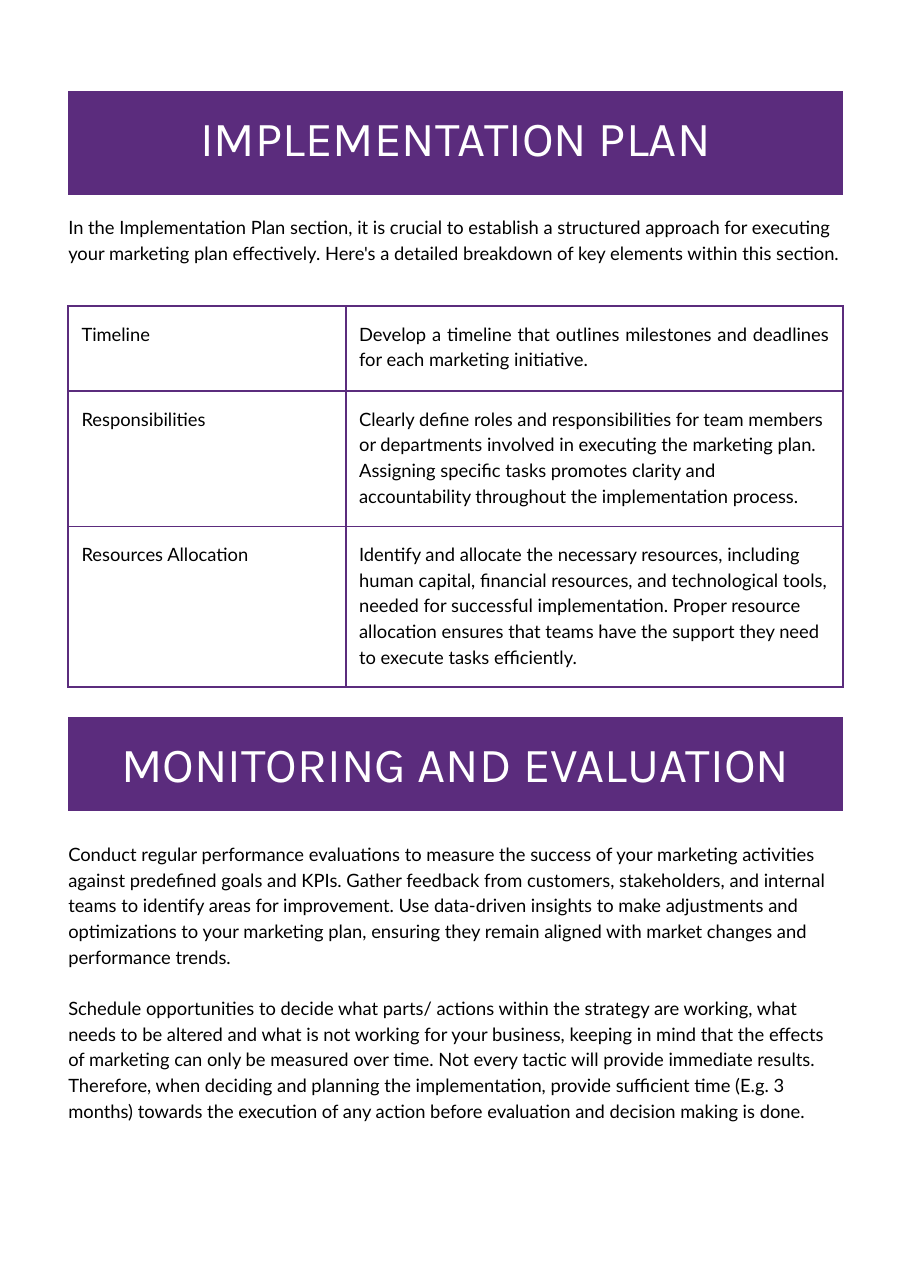
import pptx
import pptx.dml.color
import pptx.enum.text
import pptx.oxml
import pptx.oxml.ns
import pptx.util

# Content
BANNERS = {
    "plan": "IMPLEMENTATION PLAN",
    "review": "MONITORING AND EVALUATION",
}
INTRO = [
    "In the Implementation Plan section, it is crucial to establish a structured approach for "
    "executing your marketing plan effectively. Here's a detailed breakdown of key elements "
    "within this section.",
]
# Element, description, alignment of the description
ELEMENTS = [
    ("Timeline",
     "Develop a timeline that outlines milestones and deadlines for each marketing initiative.",
     "JUSTIFY"),
    ("Responsibilities",
     "Clearly define roles and responsibilities for team members or departments involved in "
     "executing the marketing plan. Assigning specific tasks promotes clarity and accountability "
     "throughout the implementation process.",
     "LEFT"),
    ("Resources Allocation",
     "Identify and allocate the necessary resources, including human capital, financial "
     "resources, and technological tools, needed for successful implementation. Proper resource "
     "allocation ensures that teams have the support they need to execute tasks efficiently.",
     "LEFT"),
]
REVIEW = [
    "Conduct regular performance evaluations to measure the success of your marketing activities "
    "against predefined goals and KPIs. Gather feedback from customers, stakeholders, and "
    "internal teams to identify areas for improvement. Use data-driven insights to make "
    "adjustments and optimizations to your marketing plan, ensuring they remain aligned with "
    "market changes and performance trends.",
    "Schedule opportunities to decide what parts/ actions within the strategy are working, what "
    "needs to be altered and what is not working for your business, keeping in mind that the "
    "effects of marketing can only be measured over time. Not every tactic will provide immediate "
    "results. Therefore, when deciding and planning the implementation, provide sufficient time "
    "(E.g. 3 months) towards the execution of any action before evaluation and decision making "
    "is done.",
]

# Format
COLORS = {"purple": "5B2C7D", "text": "000000", "banner text": "FFFFFF"}
LINE_RATIO = 1.4
BODY_SIZE, BANNER_SIZE = 12, 32
RULE_WIDTH, THIN_RULE = 1.5, 0.75

# Layout in inches
PAGE_WIDTH, PAGE_HEIGHT = 8.26, 11.69
MARGIN = 0.62
CONTENT_WIDTH = 7.03
LABEL_WIDTH = 2.52
COLUMNS = [LABEL_WIDTH, CONTENT_WIDTH - LABEL_WIDTH]
ROWS = [0.77, 1.23, 1.46]
TOPS = {"plan": 0.83, "intro": 1.93, "elements": 2.78, "review": 6.51, "review text": 7.62}

inches = pptx.util.Inches
presentation = pptx.Presentation()
presentation.slide_width = inches(PAGE_WIDTH)
presentation.slide_height = inches(PAGE_HEIGHT)
slide = presentation.slides.add_slide(presentation.slide_layouts[6])


def write(frame, paragraphs, size=BODY_SIZE, font="Lato", color="text", align="LEFT", inset=0):
    """Fill a text frame, leaving one empty line's height between paragraphs."""
    frame.word_wrap = True
    frame.margin_left = frame.margin_right = inches(inset)
    frame.margin_top = frame.margin_bottom = inches(inset)
    for index, text in enumerate(paragraphs):
        paragraph = frame.paragraphs[0] if index == 0 else frame.add_paragraph()
        paragraph.alignment = getattr(pptx.enum.text.PP_ALIGN, align)
        paragraph.line_spacing = pptx.util.Pt(size * LINE_RATIO)
        if index:
            paragraph.space_before = pptx.util.Pt(size * LINE_RATIO)
        run = paragraph.add_run()
        run.text = text
        run.font.name = font
        run.font.size = pptx.util.Pt(size)
        run.font.bold = False
        run.font.color.rgb = pptx.dml.color.RGBColor.from_string(COLORS[color])


def add_text(top, height, paragraphs):
    box = slide.shapes.add_textbox(*map(inches, (MARGIN, top, CONTENT_WIDTH, height)))
    write(box.text_frame, paragraphs)


def add_table(top, columns, rows):
    frame = slide.shapes.add_table(
        len(rows), len(columns), *map(inches, (MARGIN, top, sum(columns), sum(rows))))
    table = frame.table
    table.first_row = table.horz_banding = False
    for column, width in zip(table.columns, columns):
        column.width = inches(width)
    for row, height in zip(table.rows, rows):
        row.height = inches(height)
    return table


def set_borders(cell, top=0, bottom=0, sides=0):
    """Set border widths in points; zero hides the border."""
    properties = cell._tc.get_or_add_tcPr()
    widths = {"lnL": sides, "lnR": sides, "lnT": top, "lnB": bottom}
    for index, (edge, width) in enumerate(widths.items()):
        paint = (f'<a:solidFill><a:srgbClr val="{COLORS["purple"]}"/></a:solidFill>'
                 if width else "<a:noFill/>")
        properties.insert(index, pptx.oxml.parse_xml(
            f'<a:{edge} {pptx.oxml.ns.nsdecls("a")} w="{pptx.util.Pt(width)}">{paint}</a:{edge}>'))


def add_banner(name, height):
    cell = add_table(TOPS[name], [CONTENT_WIDTH], [height]).cell(0, 0)
    cell.fill.solid()
    cell.fill.fore_color.rgb = pptx.dml.color.RGBColor.from_string(COLORS["purple"])
    set_borders(cell)
    write_cell(cell, BANNERS[name], size=BANNER_SIZE, font="Karla", color="banner text",
               align="CENTER", inset=0.08)


def write_cell(cell, text, inset=0.12, **text_format):
    cell.margin_left = cell.margin_right = inches(inset)
    cell.margin_top = cell.margin_bottom = inches(inset)
    write(cell.text_frame, [text], inset=inset, **text_format)


# Implementation plan
add_banner("plan", 0.94)
add_text(TOPS["intro"], 0.68, INTRO)

# Table of key elements, with a thinner rule above the last row
elements_table = add_table(TOPS["elements"], COLUMNS, ROWS)
rules = [RULE_WIDTH, RULE_WIDTH, THIN_RULE, RULE_WIDTH]
for row_index, (label, description, align) in enumerate(ELEMENTS):
    for column_index, (text, alignment) in enumerate([(label, "LEFT"), (description, align)]):
        cell = elements_table.cell(row_index, column_index)
        cell.fill.background()
        set_borders(cell, rules[row_index], rules[row_index + 1], RULE_WIDTH)
        write_cell(cell, text, align=alignment)

# Monitoring and evaluation
add_banner("review", 0.85)
add_text(TOPS["review text"], 2.74, REVIEW)

presentation.save("out.pptx")
